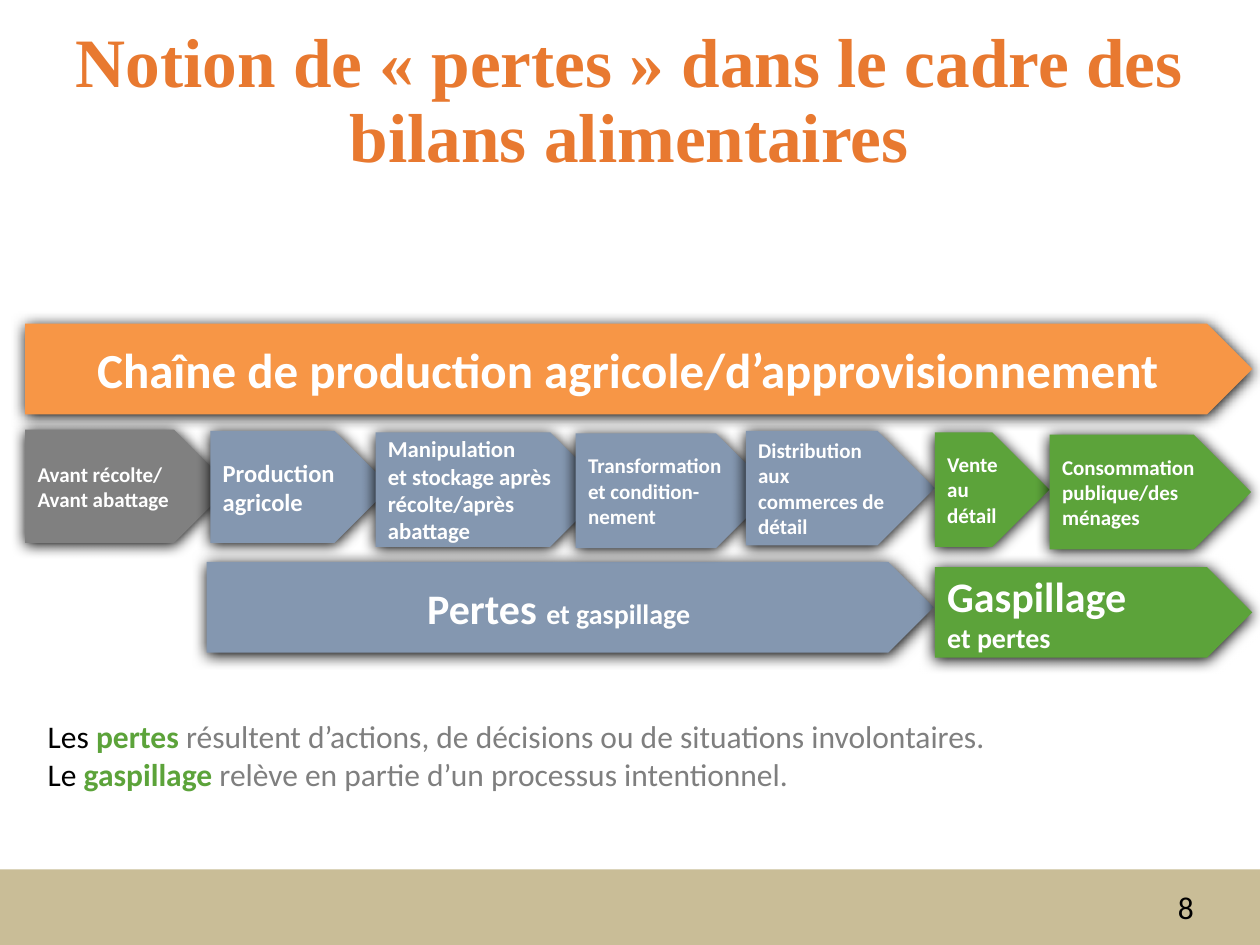
from dataclasses import dataclass

from lxml import etree
from pptx import Presentation
from pptx.dml.color import RGBColor
from pptx.enum.shapes import MSO_SHAPE
from pptx.enum.text import MSO_ANCHOR, PP_ALIGN
from pptx.oxml.ns import qn
from pptx.util import Pt

ARROW, BAND = MSO_SHAPE.PENTAGON, MSO_SHAPE.RECTANGLE
TOP, MIDDLE = MSO_ANCHOR.TOP, MSO_ANCHOR.MIDDLE
LEFT, CENTER = PP_ALIGN.LEFT, PP_ALIGN.CENTER


@dataclass(frozen=True)
class Theme:
    title_font: str = "Times New Roman"
    body_font: str = "Calibri"
    title: str = "E87930"
    chain: str = "F79646"
    before: str = "808080"
    loss: str = "8497B0"
    waste: str = "5CA33A"
    band: str = "C9BD97"
    muted: str = "7F7F7F"
    dark: str = "000000"
    light: str = "FFFFFF"
    title_size: float = 39.6
    chain_size: float = 28
    group_size: float = 24
    body_size: float = 18
    detail_size: float = 16
    step_size: float = 12


THEME = Theme()


def write(shape, paragraphs, font=THEME.body_font, size=THEME.body_size,
          color=THEME.dark, bold=False, align=LEFT, anchor=TOP, spacing=None):
    """Fill a shape; each paragraph is a list of (text, format changes) runs."""
    frame = shape.text_frame
    frame.word_wrap = True
    frame.vertical_anchor = anchor
    for index, runs in enumerate(paragraphs):
        paragraph = frame.add_paragraph() if index else frame.paragraphs[0]
        paragraph.alignment = align
        if spacing:
            paragraph.line_spacing = spacing
        for text, changes in runs:
            run = paragraph.add_run()
            run.text = text
            run.font.name = font
            run.font.size = Pt(changes.get("size", size))
            run.font.bold = changes.get("bold", bold)
            run.font.color.rgb = RGBColor.from_string(changes.get("color", color))


def add_text(slide, box, paragraphs, **text_format):
    shape = slide.shapes.add_textbox(*map(Pt, box))
    write(shape, paragraphs, **text_format)


def add_filled(slide, kind, box, fill):
    shape = slide.shapes.add_shape(kind, *map(Pt, box))
    shape.shadow.inherit = False
    shape.fill.solid()
    shape.fill.fore_color.rgb = RGBColor.from_string(fill)
    shape.line.fill.background()
    return shape


def add_shadow(shape):
    effects = shape.element.spPr.find(qn("a:effectLst"))
    shadow = etree.SubElement(
        effects, qn("a:outerShdw"), blurRad=str(Pt(8.5)), dist=str(Pt(1)),
        dir=str(90 * 60000), algn="ctr", rotWithShape="0")
    etree.SubElement(shadow, qn("a:srgbClr"), val=THEME.dark)


def add_arrow(slide, box, fill, paragraphs, **text_format):
    shape = add_filled(slide, ARROW, box, fill)
    add_shadow(shape)
    write(shape, paragraphs, color=THEME.light, bold=True, anchor=MIDDLE, **text_format)


def add_steps(slide):
    small = THEME.step_size
    steps = [  # left, top, width, height, fill, size, lines
        (14.4, 245.5, 117.4, 64.8, THEME.before, small, ["Avant récolte/", "Avant abattage"]),
        (120.2, 246.2, 103, 64.1, THEME.loss, 14, ["Production agricole"]),
        (214.6, 247, 132.5, 65.5, THEME.loss, 13,
         ["Manipulation", "et stockage après récolte/après abattage"]),
        (329, 247.7, 113, 65.5, THEME.loss, small, ["Transformation et condition-nement"]),
        (426.2, 246.2, 108, 65.5, THEME.loss, small, ["Distribution aux commerces de détail"]),
        (534.2, 247, 65.5, 65.5, THEME.waste, small, ["Vente au détail"]),
        (599.8, 248.4, 115.2, 65.5, THEME.waste, small, ["Consommation publique/des ménages"]),
    ]
    for *box, fill, size, lines in steps:
        add_arrow(slide, box, fill, [[(line, {})] for line in lines], size=size)


def main():
    presentation = Presentation()
    presentation.slide_width, presentation.slide_height = Pt(720), Pt(540)
    slide = presentation.slides.add_slide(presentation.slide_layouts[6])

    # Footer band and page number
    add_filled(slide, BAND, (0, 496.8, 720, 43.2), THEME.band)
    add_text(slide, (666, 504, 49.7, 28.8), [[("8", {})]])

    # Definitions
    key = {"color": THEME.waste, "bold": True}
    muted = {"color": THEME.muted}
    add_text(slide, (20.2, 406.1, 607, 51.1), [
        [("Les ", {}), ("pertes", key),
         (" résultent d’actions, de décisions ou de situations involontaires.", muted)],
        [("Le ", {}), ("gaspillage", key),
         (" relève en partie d’un processus intentionnel.", muted)],
    ])

    # Whole chain, then the loss and waste groups
    detail = {"size": THEME.detail_size}
    add_arrow(slide, (14.4, 185, 701.3, 51.8), THEME.chain,
              [[("Chaîne de production agricole/d’approvisionnement", {})]],
              size=THEME.chain_size, align=CENTER)
    add_arrow(slide, (118.1, 321.1, 415.4, 51.8), THEME.loss,
              [[("Pertes ", {}), ("et gaspillage", detail)]],
              size=THEME.group_size, align=CENTER)
    add_arrow(slide, (534.2, 324, 181.4, 51.8), THEME.waste,
              [[("Gaspillage", {})], [("et pertes", detail)]], size=THEME.group_size)

    # Steps of the chain
    add_steps(slide)

    # Title
    add_text(slide, (25.2, 18, 668.9, 81.4),
             [[("Notion de « pertes » dans le cadre des bilans alimentaires", {})]],
             font=THEME.title_font, size=THEME.title_size, color=THEME.title,
             bold=True, align=CENTER, anchor=MIDDLE, spacing=0.9)

    presentation.save("out.pptx")


if __name__ == "__main__":
    main()
